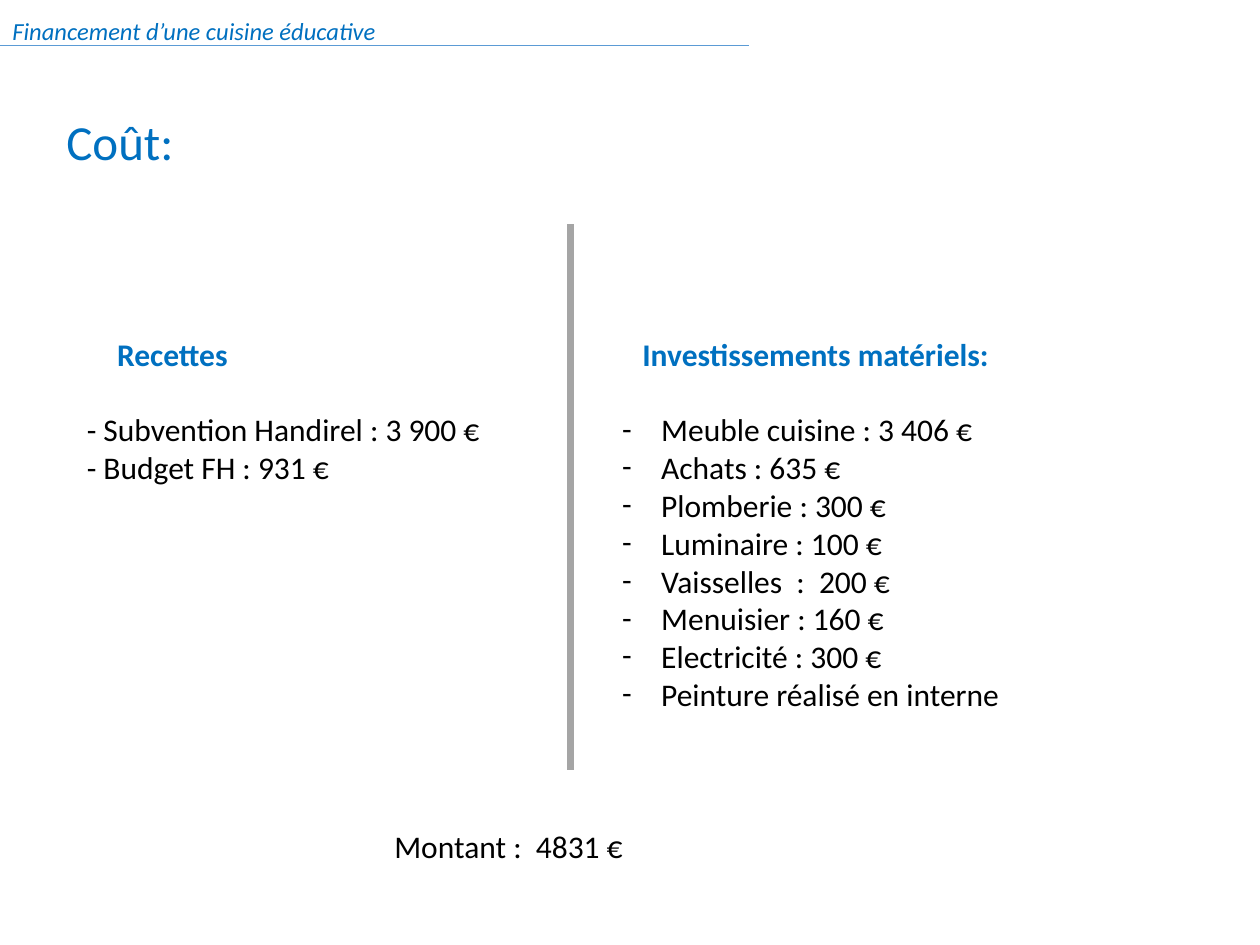
"""Build the cost slide for the financing of a teaching kitchen."""
from dataclasses import dataclass

from lxml import etree
from pptx import Presentation
from pptx.dml.color import RGBColor
from pptx.enum.shapes import MSO_CONNECTOR as Connector
from pptx.enum.text import MSO_ANCHOR as Anchor
from pptx.oxml.ns import qn
from pptx.slide import Slide
from pptx.util import Cm, Pt

BLUE = RGBColor(0x00, 0x70, 0xC0)
BLACK = RGBColor(0x00, 0x00, 0x00)
RULE_BLUE = RGBColor(0x5B, 0x9B, 0xD5)
GREY = RGBColor(0xA5, 0xA5, 0xA5)

HEADING_TOP = 6.63
LIST_TOP = 8.15

RECEIPTS = ["- Subvention Handirel : 3 900 €", "- Budget FH : 931 €"]
INVESTMENTS = [
    "Meuble cuisine : 3 406 €",
    "Achats : 635 €",
    "Plomberie : 300 €",
    "Luminaire : 100 €",
    "Vaisselles  :  200 €",
    "Menuisier : 160 €",
    "Electricité : 300 €",
    "Peinture réalisé en interne",
]


@dataclass
class Board:
    slide: Slide
    font: str = "Calibri"
    size: int = 18
    indent: float = 0.79

    def line(self, start, end, color, width):
        rule = self.slide.shapes.add_connector(
            Connector.STRAIGHT, *(Cm(value) for value in (*start, *end)))
        rule.line.color.rgb = color
        rule.line.width = Pt(width)
        etree.SubElement(rule._element.spPr, qn("a:effectLst"))

    def text(self, box, lines, color=BLACK, size=None, bold=False, italic=False,
             dashes=False, anchor=Anchor.TOP, spacing=None):
        frame = self.slide.shapes.add_textbox(*(Cm(value) for value in box)).text_frame
        frame.word_wrap = True
        frame.vertical_anchor = anchor
        for index, wording in enumerate(lines):
            paragraph = frame.add_paragraph() if index else frame.paragraphs[0]
            if dashes:
                self.dash(paragraph)
            if spacing:
                paragraph.line_spacing = spacing
            run = paragraph.add_run()
            run.text = wording
            run.font.name = self.font
            run.font.size = Pt(size or self.size)
            run.font.bold = bold
            run.font.italic = italic
            run.font.color.rgb = color

    def dash(self, paragraph):
        properties = paragraph._p.get_or_add_pPr()
        properties.set("marL", str(Cm(self.indent)))
        properties.set("indent", str(-Cm(self.indent)))
        etree.SubElement(properties, qn("a:buFont"), typeface=self.font)
        etree.SubElement(properties, qn("a:buChar"), char="-")

    def heading(self, left, width, wording):
        self.text((left, HEADING_TOP, width, 1.02), [wording], BLUE, bold=True)


def main():
    deck = Presentation()
    deck.slide_width, deck.slide_height = Cm(25.4), Cm(19.05)
    board = Board(deck.slides.add_slide(deck.slide_layouts[6]))

    board.line((0, 0.91), (15.09, 0.91), RULE_BLUE, 0.5)
    board.text((1.09, 2.13, 24, 3), ["Coût:"], BLUE, size=28)
    board.text((0, -0.08, 26.24, 1.12), ["Financement d’une cuisine éducative"],
               BLUE, size=14, italic=True, anchor=Anchor.BOTTOM, spacing=0.9)

    board.text((12.29, LIST_TOP, 10.59, 6.4), INVESTMENTS, dashes=True)
    board.line((11.51, 4.52), (11.51, 15.52), GREY, 4)
    board.heading(12.7, 9.19, "Investissements matériels:")
    board.text((1.5, LIST_TOP, 9.19, 2.57), RECEIPTS)
    board.heading(2.11, 7.8, "Recettes")
    board.text((7.7, 16.54, 8.99, 1.8), ["Montant :  4831 €"])

    deck.save("out.pptx")


if __name__ == "__main__":
    main()
